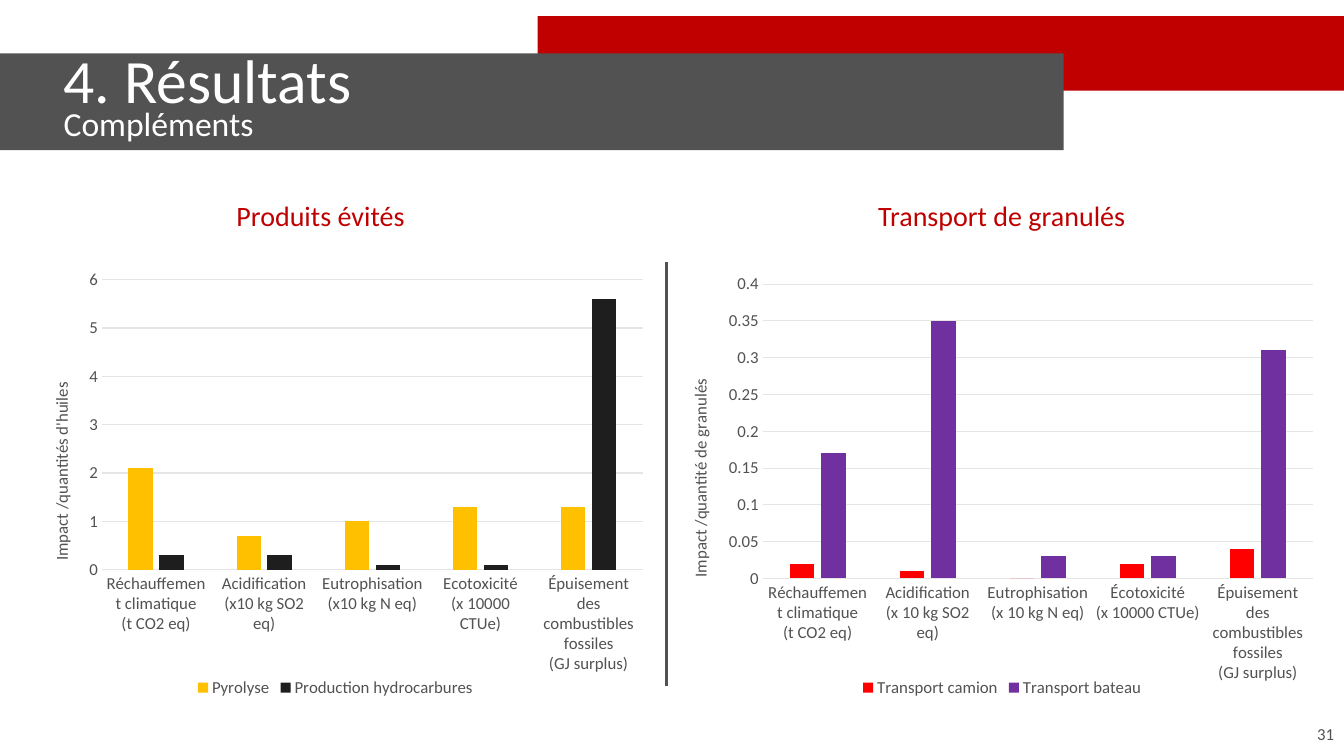
from dataclasses import dataclass

from lxml import etree
from pptx import Presentation, util as u
from pptx.chart.data import CategoryChartData
from pptx.dml.color import RGBColor
from pptx.enum import chart as ch, shapes, text
from pptx.oxml.ns import qn


@dataclass(frozen=True)
class Theme:
    font: str = "Calibri"
    red: str = "C00000"
    gray: str = "525252"
    white: str = "FFFFFF"
    grid: str = "E5E5E5"
    title: int = 44
    sub: int = 24
    head: int = 20
    small: int = 12


def rgb(code):
    return RGBColor.from_string(code)


def apply(item, **values):
    for name, value in values.items():
        setattr(item, name, value)


class Deck:
    """Draws on one slide; every box is given in percent of its size."""

    def __init__(self, theme):
        self.theme = theme
        self.prs = Presentation()
        apply(self.prs, slide_width=u.Inches(13.33), slide_height=u.Inches(7.5))
        self.slide = self.prs.slides.add_slide(self.prs.slide_layouts[5])
        self.shapes = self.slide.shapes

    def place(self, *box):
        sides = (self.prs.slide_width, self.prs.slide_height)
        return [round(part * sides[i % 2] / 100) for i, part in enumerate(box)]

    def style(self, font, size, color):
        apply(font, name=self.theme.font, size=u.Pt(size), bold=False)
        font.color.rgb = rgb(color)

    def bar(self, box, color):
        bar = self.shapes.add_shape(shapes.MSO_SHAPE.RECTANGLE, *self.place(*box))
        bar.shadow.inherit = False
        bar.fill.solid()
        bar.fill.fore_color.rgb = rgb(color)
        bar.line.fill.background()

    def title(self, box, main, sub):
        title = self.shapes.title
        # Bring the title in front of the bars
        self.shapes._spTree.append(title._element)
        apply(title, **dict(zip(("left", "top", "width", "height"), self.place(*box))))
        apply(title.text_frame, auto_size=text.MSO_AUTO_SIZE.NONE, word_wrap=True,
              vertical_anchor=text.MSO_ANCHOR.MIDDLE)
        para = title.text_frame.paragraphs[0]
        apply(para, alignment=text.PP_ALIGN.LEFT, line_spacing=0.7)
        for words, size in ((main, self.theme.title), (sub, self.theme.sub)):
            if para.runs:
                para.add_line_break()
            run = para.add_run()
            run.text = words
            self.style(run.font, size, self.theme.white)

    def label(self, box, words, size, color, align, anchor=text.MSO_ANCHOR.TOP):
        frame = self.shapes.add_textbox(*self.place(*box)).text_frame
        apply(frame, word_wrap=True, vertical_anchor=anchor)
        para = frame.paragraphs[0]
        apply(para, text=words, alignment=align, line_spacing=0.9)
        self.style(para.runs[0].font, size, color)

    def rule(self, ends, color, width):
        line = self.shapes.add_connector(shapes.MSO_CONNECTOR.STRAIGHT, *self.place(*ends))
        line.line.color.rgb = rgb(color)
        line.line.width = u.Pt(width)
        etree.SubElement(line._element.spPr, qn("a:effectLst"))

    def chart(self, box, plot, cats, series, unit, top, step):
        """Add a column chart; series holds (name, color, values) rows."""
        theme = self.theme
        data = CategoryChartData()
        data.categories = cats
        for name, _, values in series:
            data.add_series(name, values)
        chart = self.shapes.add_chart(
            ch.XL_CHART_TYPE.COLUMN_CLUSTERED, *self.place(*box), data).chart
        apply(chart, has_title=False, has_legend=True)
        apply(chart.legend, position=ch.XL_LEGEND_POSITION.BOTTOM, include_in_layout=False)
        self.style(chart.font, theme.small, theme.gray)

        bars = chart.plots[0]
        apply(bars, gap_width=219, overlap=-27, vary_by_categories=False)
        for one, (_, color, _) in zip(bars.series, series):
            one.format.fill.solid()
            one.format.fill.fore_color.rgb = rgb(color)

        none = ch.XL_TICK_MARK.NONE
        cat, val = chart.category_axis, chart.value_axis
        apply(cat, major_tick_mark=none, minor_tick_mark=none)
        apply(val, major_tick_mark=none, minor_tick_mark=none, has_title=True,
              has_major_gridlines=True, minimum_scale=0, maximum_scale=top,
              major_unit=step)
        for line in (cat.format.line, val.major_gridlines.format.line):
            line.color.rgb = rgb(theme.grid)
            line.width = u.Pt(0.75)
        val.format.line.fill.background()
        para = val.axis_title.text_frame.paragraphs[0]
        para.text = unit
        self.style(para.runs[0].font, theme.small, theme.gray)
        self.fix_plot(chart, plot)

    def fix_plot(self, chart, plot):
        """Pin the inner plot area to shares of the chart frame."""
        area = chart._chartSpace.chart.plotArea
        for old in area.findall(qn("c:layout")):
            area.remove(old)
        layout = etree.Element(qn("c:layout"))
        area.insert(0, layout)
        manual = etree.SubElement(layout, qn("c:manualLayout"))
        marks = [("layoutTarget", "inner"), ("xMode", "edge"), ("yMode", "edge")]
        for tag, value in marks + list(zip("xywh", plot)):
            etree.SubElement(manual, qn("c:" + tag)).set("val", str(value))


def main():
    theme = Theme()
    deck = Deck(theme)
    deck.bar((40, 2.13, 60, 9.87), theme.red)
    deck.bar((0, 7.07, 79.14, 12.8), theme.gray)
    deck.title((3.98, 4.67, 75.24, 17.6), "4. Résultats", "Compléments")
    deck.label((77.5, 94.53, 22.5, 5.33), "31", theme.small, theme.gray,
               text.PP_ALIGN.RIGHT, text.MSO_ANCHOR.MIDDLE)
    for left, width, words in ((15.08, 17.55, "Produits évités"),
                               (62.27, 24.53, "Transport de granulés")):
        deck.label((left, 26.13, width, 6.67), words, theme.head, theme.red,
                   text.PP_ALIGN.CENTER)
    deck.rule((49.59, 90.8, 49.59, 34.67), theme.gray, 2.25)

    warm = "Réchauffement climatique\n(t CO2 eq)"
    fuel = "Épuisement des combustibles fossiles\n(GJ surplus)"
    deck.chart(
        (2.1, 34.67, 45.76, 58.13), (0.12, 0.04, 0.88, 0.66),
        [warm, "Acidification\n(x10 kg SO2 eq)", "Eutrophisation\n(x10 kg N eq)",
         "Ecotoxicité\n(x 10000 CTUe)", fuel],
        [("Pyrolyse", "FFC000", (2.1, 0.7, 1, 1.3, 1.3)),
         ("Production hydrocarbures", "1E1E1E", (0.3, 0.3, 0.1, 0.1, 5.6))],
        "Impact /quantités d'huiles", 6, 1)
    deck.chart(
        (50.49, 34.67, 48.16, 58.13), (0.13, 0.05, 0.85, 0.67),
        [warm, "Acidification\n(x 10 kg SO2 eq)", "Eutrophisation\n(x 10 kg N eq)",
         "Écotoxicité\n(x 10000 CTUe)", fuel],
        [("Transport camion", "FF0000", (0.02, 0.01, 0, 0.02, 0.04)),
         ("Transport bateau", "7030A0", (0.17, 0.35, 0.03, 0.03, 0.31))],
        "Impact /quantité de granulés", 0.4, 0.05)
    deck.prs.save("out.pptx")


if __name__ == "__main__":
    main()
